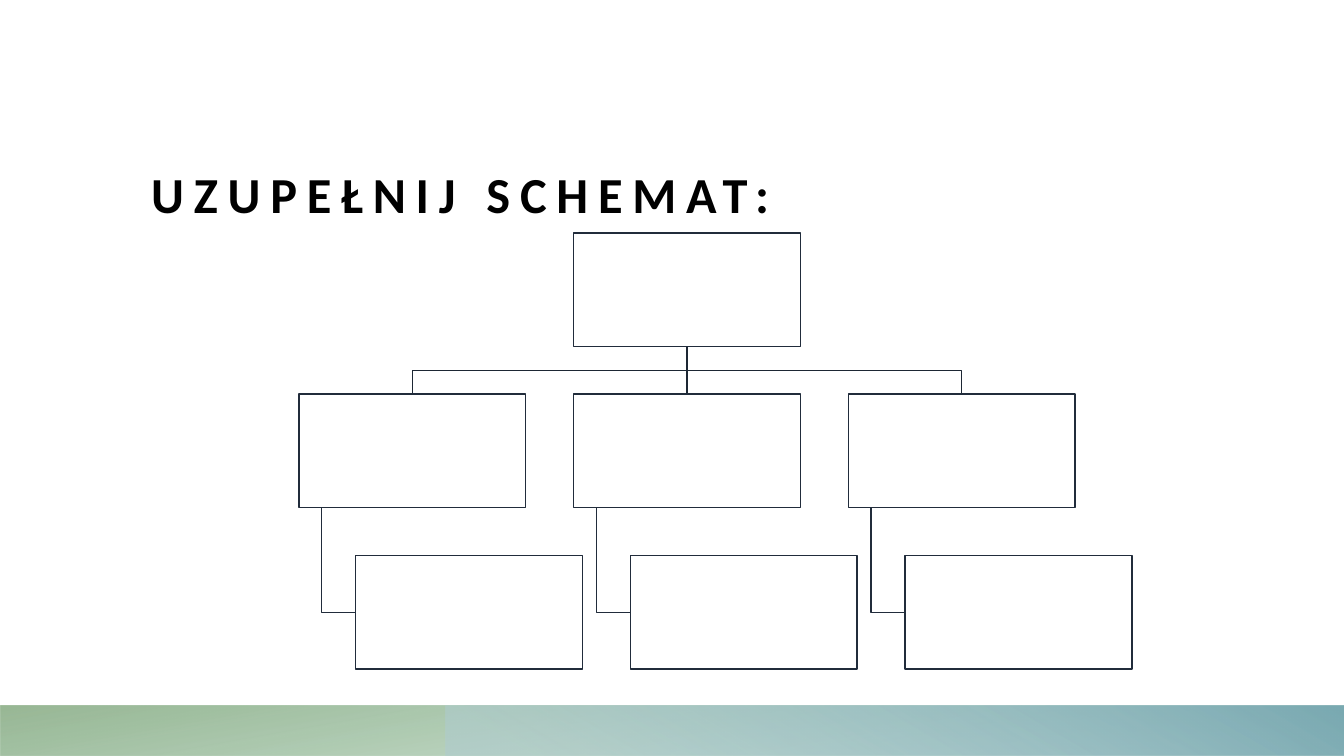
import pptx
import pptx.dml.color
import pptx.enum.shapes
import pptx.enum.text
import pptx.oxml
import pptx.oxml.ns
import pptx.util

Pt = pptx.util.Pt
RECTANGLE = pptx.enum.shapes.MSO_SHAPE.RECTANGLE
SLIDE_W, SLIDE_H = 960, 540
BOX_W, BOX_H = 162, 81
COLUMN_STEP, ROW_STEP = 196.2, 115.2
BOX_LINE, BRANCH_LINE = "212C3B", "1D2734"


def color(hex_string):
    return pptx.dml.color.RGBColor.from_string(hex_string)


def apply(target, values):
    for name, value in values.items():
        setattr(target, name, value)


def set_line(part, hex_string):
    part.line.color.rgb = color(hex_string)
    part.line.width = Pt(1)


def draw_band(slide, box, stops, angle, rotation=0):
    """Gradient strip; stops are (position %, colour, opacity %)."""
    band = slide.shapes.add_shape(RECTANGLE, *map(Pt, box))
    band.shadow.inherit = False
    band.line.fill.background()
    band.rotation = rotation
    band._element.spPr.xfrm.set("flipH", "1")
    band.fill.gradient()
    band.fill.gradient_angle = 360 - angle
    for stop, (position, hex_string, opacity) in zip(band.fill.gradient_stops, stops):
        stop.position = position / 100
        stop.color.rgb = color(hex_string)
        rgb = stop._gs.find(pptx.oxml.ns.qn("a:srgbClr"))
        alpha = pptx.oxml.parse_xml(
            f'<a:alpha {pptx.oxml.ns.nsdecls("a")} val="{opacity * 1000}"/>')
        rgb.append(alpha)


def draw_footer(slide, box):
    left, top, width, height = box
    # Green strip across, then the blue strip over its right two thirds
    draw_band(slide, box, [(14, "77AF89", 28), (100, "86AB82", 85)], 100, 180)
    blue_left = 318
    draw_band(slide, (left + blue_left, top, width - blue_left, height),
              [(9, "AFCCD1", 55), (99, "7AAAB2", 100)], 240)


def draw_title(slide, box, text):
    title = slide.shapes.add_textbox(*map(Pt, box))
    frame = title.text_frame
    apply(frame, {
        "word_wrap": True,
        "vertical_anchor": pptx.enum.text.MSO_ANCHOR.BOTTOM,
        "margin_left": 0, "margin_right": 0, "margin_top": 0, "margin_bottom": 0,
    })
    run = frame.paragraphs[0].add_run()
    run.text = text
    apply(run.font, {"name": "Calibri", "size": Pt(36), "bold": True})
    run.font.color.rgb = color("000000")
    run._r.get_or_add_rPr().set("spc", "700")


def draw_box(slide, left, top):
    node = slide.shapes.add_shape(RECTANGLE, *map(Pt, (left, top, BOX_W, BOX_H)))
    node.shadow.inherit = False
    node.fill.solid()
    node.fill.fore_color.rgb = color("FFFFFF")
    set_line(node, BOX_LINE)


def draw_bent_line(slide, points, hex_string):
    start, *rest = [tuple(map(Pt, point)) for point in points]
    builder = slide.shapes.build_freeform(*start)
    builder.add_line_segments(rest, close=False)
    branch = builder.convert_to_shape()
    branch.shadow.inherit = False
    branch.fill.background()
    set_line(branch, hex_string)


def draw_straight_line(slide, start, end, hex_string):
    trunk = slide.shapes.add_connector(
        pptx.enum.shapes.MSO_CONNECTOR.STRAIGHT, *map(Pt, start + end))
    trunk._element.spPr.append(
        pptx.oxml.parse_xml(f'<a:effectLst {pptx.oxml.ns.nsdecls("a")}/>'))
    set_line(trunk, hex_string)


def draw_scheme(slide, box):
    left, top, width, height = box
    columns = [left + i * COLUMN_STEP for i in range(3)]
    middle_row, bottom_row = top + ROW_STEP, top + 2 * ROW_STEP
    root_x = columns[1] + BOX_W / 2
    root_bottom = top + BOX_H
    bend_y = (root_bottom + middle_row) / 2

    # Lines lie behind the boxes
    for column in columns:
        center = column + BOX_W / 2
        if center == root_x:
            draw_straight_line(slide, (root_x, root_bottom), (root_x, middle_row), BRANCH_LINE)
        else:
            draw_bent_line(slide, [(root_x, root_bottom), (root_x, bend_y),
                                   (center, bend_y), (center, middle_row)], BRANCH_LINE)
        stem_x, child_y = column + BOX_W / 10, bottom_row + BOX_H / 2
        draw_bent_line(slide, [(stem_x, middle_row + BOX_H), (stem_x, child_y),
                               (column + BOX_W / 4, child_y)], BOX_LINE)

    # Root box, then each branch with its child
    draw_box(slide, columns[1], top)
    for column in columns:
        draw_box(slide, column, middle_row)
        draw_box(slide, column + BOX_W / 4, bottom_row)


def main():
    deck = pptx.Presentation()
    apply(deck, {"slide_width": Pt(SLIDE_W), "slide_height": Pt(SLIDE_H)})
    slide = deck.slides.add_slide(deck.slide_layouts[6])
    draw_footer(slide, (0, 504, SLIDE_W, 36))
    draw_title(slide, (108, 62.6, 806.4, 97.2), "UZUPEŁNIJ SCHEMAT:")
    draw_scheme(slide, (213.6, 166.4, 595, 311.4))
    deck.save("out.pptx")


if __name__ == "__main__":
    main()
